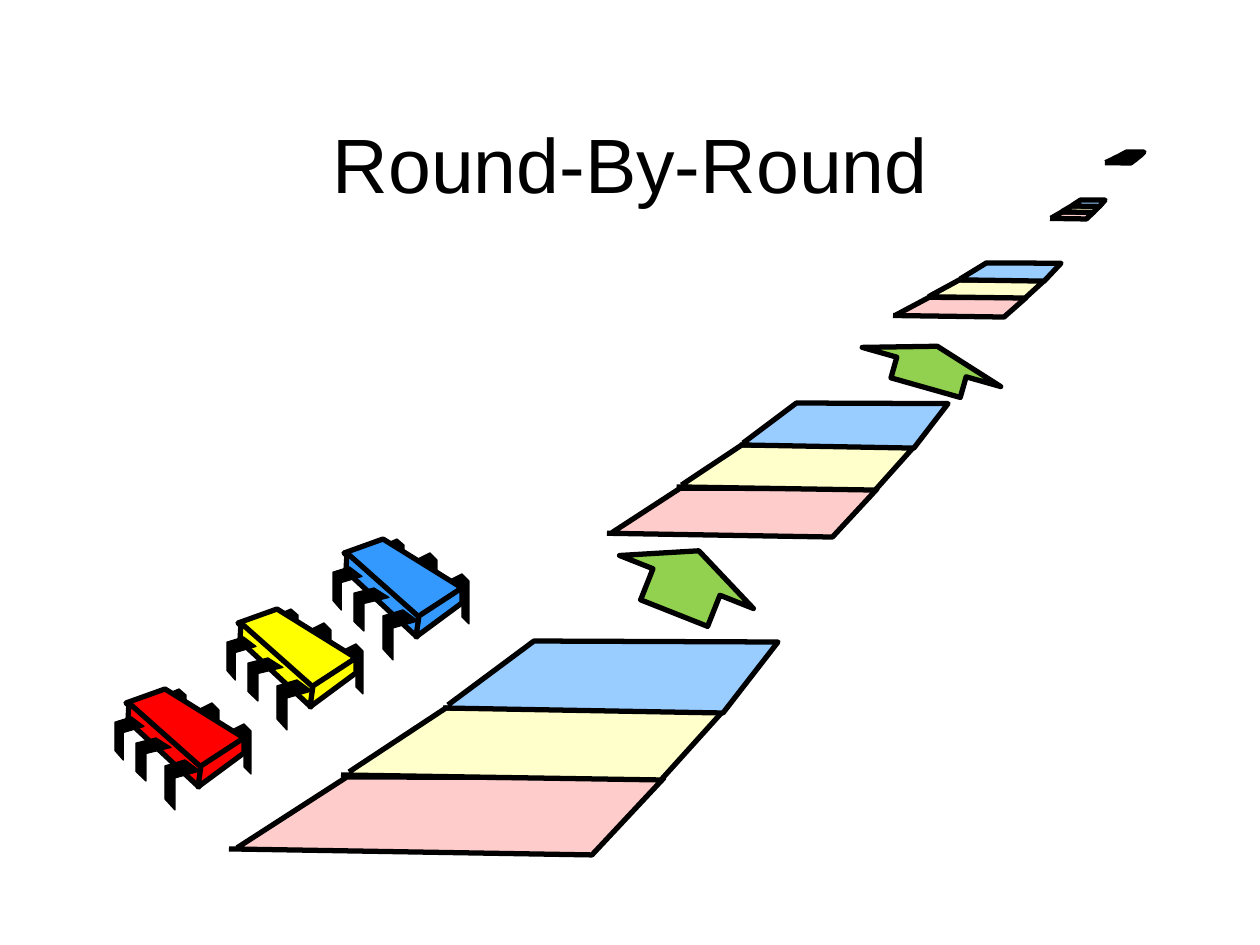
from dataclasses import dataclass

from pptx import Presentation
from pptx.dml.color import RGBColor
from pptx.enum.shapes import MSO_SHAPE as Shape
from pptx.enum.text import MSO_ANCHOR as Anchor, PP_ALIGN as Align
from pptx.util import Emu, Pt

EMU_PER_PX = 914400 / 126


@dataclass(frozen=True)
class Theme:
    font: str = "Arial"
    title_size: int = 44
    ink: str = "000000"
    bands: tuple = ("FFCCCC", "FFFFCC", "99CCFF")
    arrow: str = "92D050"
    red: str = "FF0000"
    yellow: str = "FFFF00"
    blue: str = "3399FF"
    bold_line: float = 3
    thin_line: float = 0.75


# Front to back, drawn inside a box of STACK_SIZE.
STACK_SIZE = (549, 214)
BANDS = (
    ((8, 207), (118, 136), (435, 137), (363, 214), (0, 208)),
    ((120, 131), (217, 67), (496, 68), (432, 139), (112, 134)),
    ((219, 64), (305, 0), (549, 1), (494, 72), (214, 67)),
)
STACKS = (
    (229, 641, 549, 214),
    (607, 403, 341, 134),
    (893, 263, 168, 54),
    (1050, 200, 55, 19),
    (1105, 152, 39, 11),
)

CHIP_SIZE = (129, 121)
CHIP_FACES = (
    ((50, 0), (129, 49), (84, 79), (11, 14)),
    ((14, 14), (86, 78), (84, 98), (13, 32)),
    ((129, 49), (129, 64), (83, 98), (86, 77)),
)
BACK_LEG_SIZE = (21, 50)
BACK_LEG = ((0, 7), (14, 0), (21, 7), (21, 50), (14, 43), (14, 14), (0, 21))
BACK_LEG_BOXES = ((115, 35, 21, 50), (83, 14, 21, 50), (50, 0, 21, 43))
FRONT_LEG_SIZE = (35, 50)
FRONT_LEG = ((20, 0), (35, 11), (10, 18), (10, 50), (0, 39), (0, 6))
FRONT_LEG_BOXES = ((50, 71, 35, 50), (21, 49, 35, 43), (0, 28, 29, 43))

ARROWS = (((910, 295, 43, 144), 285.8), ((653, 510, 67, 144), 291.6))


def emu(px):
    return Emu(round(px * EMU_PER_PX))


def color(code):
    return RGBColor.from_string(code)


def write_text(frame, text, *, font, size, ink, align=Align.LEFT, anchor=Anchor.TOP):
    frame.word_wrap = True
    frame.vertical_anchor = anchor
    para = frame.paragraphs[0]
    para.alignment = align
    span = para.add_run()
    span.text = text
    span.font.name = font
    span.font.size = Pt(size)
    span.font.color.rgb = color(ink)


class Painter:
    def __init__(self, page, theme):
        self.page = page
        self.theme = theme

    def paint(self, shape, fill, weight):
        shape.shadow.inherit = False
        shape.fill.solid()
        shape.fill.fore_color.rgb = color(fill)
        shape.line.color.rgb = color(self.theme.ink)
        shape.line.width = Pt(weight)

    def title(self, text, box):
        title = self.page.shapes.title
        title.left, title.top, title.width, title.height = map(emu, box)
        write_text(title.text_frame, text, font=self.theme.font,
                   size=self.theme.title_size, ink=self.theme.ink,
                   align=Align.CENTER, anchor=Anchor.MIDDLE)

    def outline(self, group, points, size, box, fill, weight, close=True):
        """Draw points, given within size, stretched to fill box."""
        left, top, width, height = box
        corners = [(emu(left + x * width / size[0]), emu(top + y * height / size[1]))
                   for x, y in points]
        builder = group.shapes.build_freeform(*corners[0])
        builder.add_line_segments(corners[1:], close=close)
        self.paint(builder.convert_to_shape(), fill, weight)

    def stack(self, box):
        group = self.page.shapes.add_group_shape()
        for points, fill in zip(BANDS, self.theme.bands):
            self.outline(group, points, STACK_SIZE, box, fill,
                         self.theme.bold_line, close=False)

    def legs(self, group, points, size, boxes, left, top):
        for x, y, width, height in boxes:
            self.outline(group, points, size, (left + x, top + y, width, height),
                         self.theme.ink, self.theme.thin_line)

    def chip(self, left, top, fill):
        group = self.page.shapes.add_group_shape()
        self.legs(group, BACK_LEG, BACK_LEG_SIZE, BACK_LEG_BOXES, left, top)
        for points in CHIP_FACES:
            self.outline(group, points, CHIP_SIZE, (left, top, *CHIP_SIZE), fill,
                         self.theme.bold_line)
        self.legs(group, FRONT_LEG, FRONT_LEG_SIZE, FRONT_LEG_BOXES, left, top)

    def arrow(self, box, angle):
        arrow = self.page.shapes.add_shape(Shape.RIGHT_ARROW, *map(emu, box))
        arrow.rotation = angle
        self.paint(arrow, self.theme.arrow, self.theme.bold_line)


def main():
    deck = Presentation()
    deck.slide_width, deck.slide_height = emu(1260), emu(945)
    theme = Theme()
    painter = Painter(deck.slides.add_slide(deck.slide_layouts[5]), theme)

    painter.title("Round-By-Round", (95, 84, 1071, 158))
    for box in STACKS:
        painter.stack(box)
    for box, angle in ARROWS:
        painter.arrow(box, angle)
    painter.chip(115, 689, theme.red)
    painter.chip(333, 539, theme.blue)
    painter.chip(227, 609, theme.yellow)

    deck.save("out.pptx")


if __name__ == "__main__":
    main()
